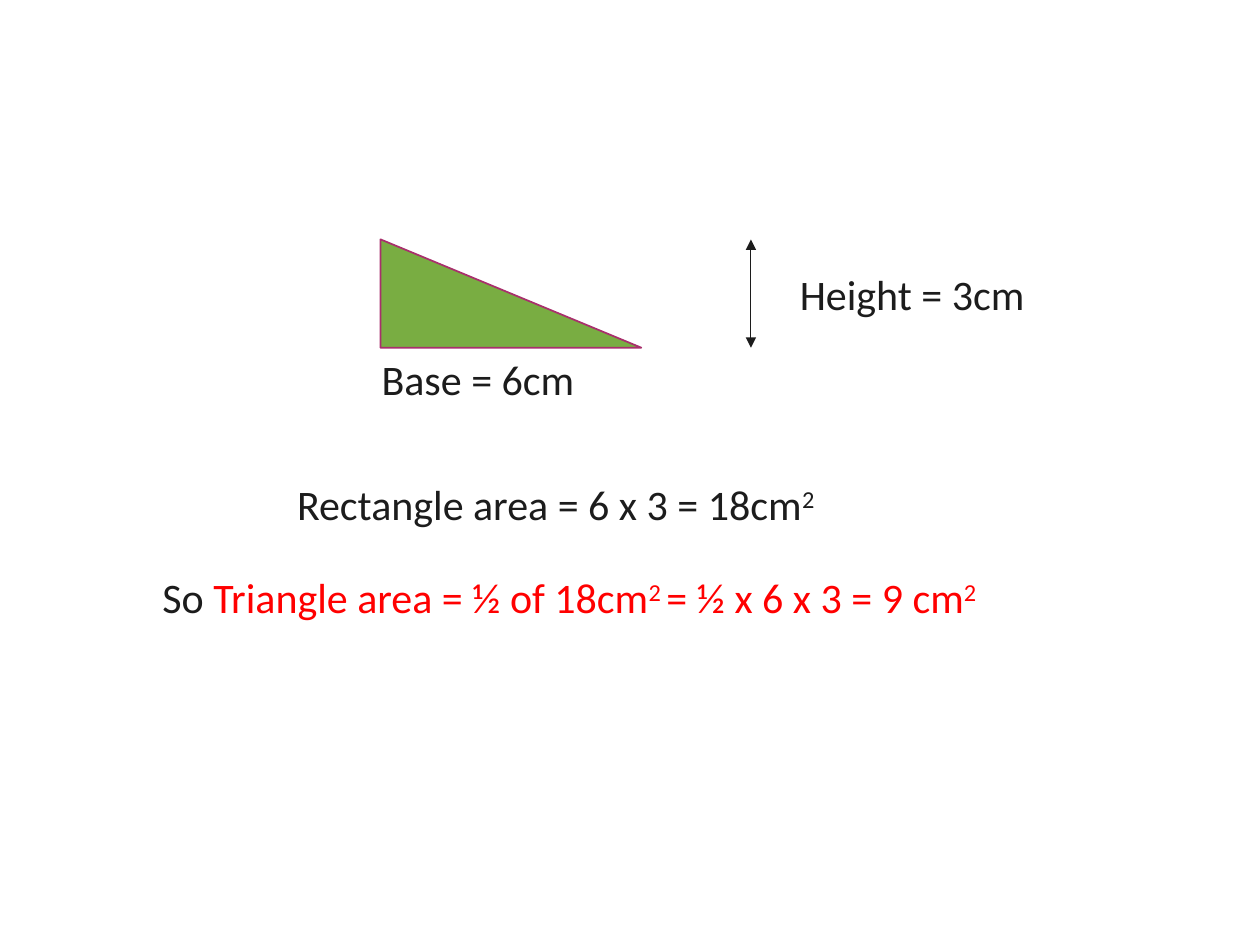
from lxml.etree import SubElement
from pptx import Presentation
from pptx.dml.color import RGBColor
from pptx.enum.shapes import MSO_CONNECTOR, MSO_SHAPE
from pptx.oxml.ns import qn
from pptx.util import Inches, Pt

COLORS = {"ink": "1C1C1C", "answer": "FF0000", "triangle": "79AD42", "outline": "A8306C"}
TOP, BOTTOM = 1.9, 2.76
ARROW_X = 5.96

presentation = Presentation()
presentation.slide_width = Inches(10)
presentation.slide_height = Inches(7.5)
slide = presentation.slides.add_slide(presentation.slide_layouts[6])


def add_run(paragraph, text, color="ink", size=24, superscript=False):
    run = paragraph.add_run()
    run.text = text
    run.font.name = "Calibri"
    run.font.size = Pt(size)
    run.font.color.rgb = RGBColor.from_string(COLORS[color])
    if superscript:
        run.font._element.set("baseline", "30000")


arrow = slide.shapes.add_connector(
    MSO_CONNECTOR.STRAIGHT, Inches(ARROW_X), Inches(TOP), Inches(ARROW_X), Inches(BOTTOM)
)
arrow.line.color.rgb = RGBColor.from_string(COLORS["ink"])
arrow.line.width = Pt(0.5)
line_element = arrow.line._get_or_add_ln()
for end in ("a:headEnd", "a:tailEnd"):
    SubElement(line_element, qn(end), type="triangle")
SubElement(arrow._element.spPr, qn("a:effectLst"))

triangle = slide.shapes.add_shape(
    MSO_SHAPE.RIGHT_TRIANGLE, Inches(3.02), Inches(TOP), Inches(2.07), Inches(BOTTOM - TOP)
)
triangle.shadow.inherit = False
triangle.fill.solid()
triangle.fill.fore_color.rgb = RGBColor.from_string(COLORS["triangle"])
triangle.line.color.rgb = RGBColor.from_string(COLORS["outline"])
triangle.line.width = Pt(1)

text_lines = [
    (6.25, 2.08, 2.44, [("Height = 3cm", {})]),
    (2.93, BOTTOM, 2.07, [("Base = 6cm", {})]),
    (2.26, 3.75, 4.96, [("Rectangle area = 6 x 3 = 18cm", {}), ("2", {"superscript": True})]),
    (1.19, 4.49, 7.82, [
        ("So ", {}),
        ("Triangle area = ½ of 18cm", {"color": "answer"}),
        ("2 ", {"color": "answer", "superscript": True}),
        ("= ½ x 6 x 3 = 9 cm", {"color": "answer"}),
        ("2", {"color": "answer", "superscript": True}),
    ]),
]
for left, top, width, runs in text_lines:
    text_box = slide.shapes.add_textbox(Inches(left), Inches(top), Inches(width), Inches(0.5))
    text_box.text_frame.word_wrap = True
    for text, run_format in runs:
        add_run(text_box.text_frame.paragraphs[0], text, **run_format)

presentation.save("out.pptx")
